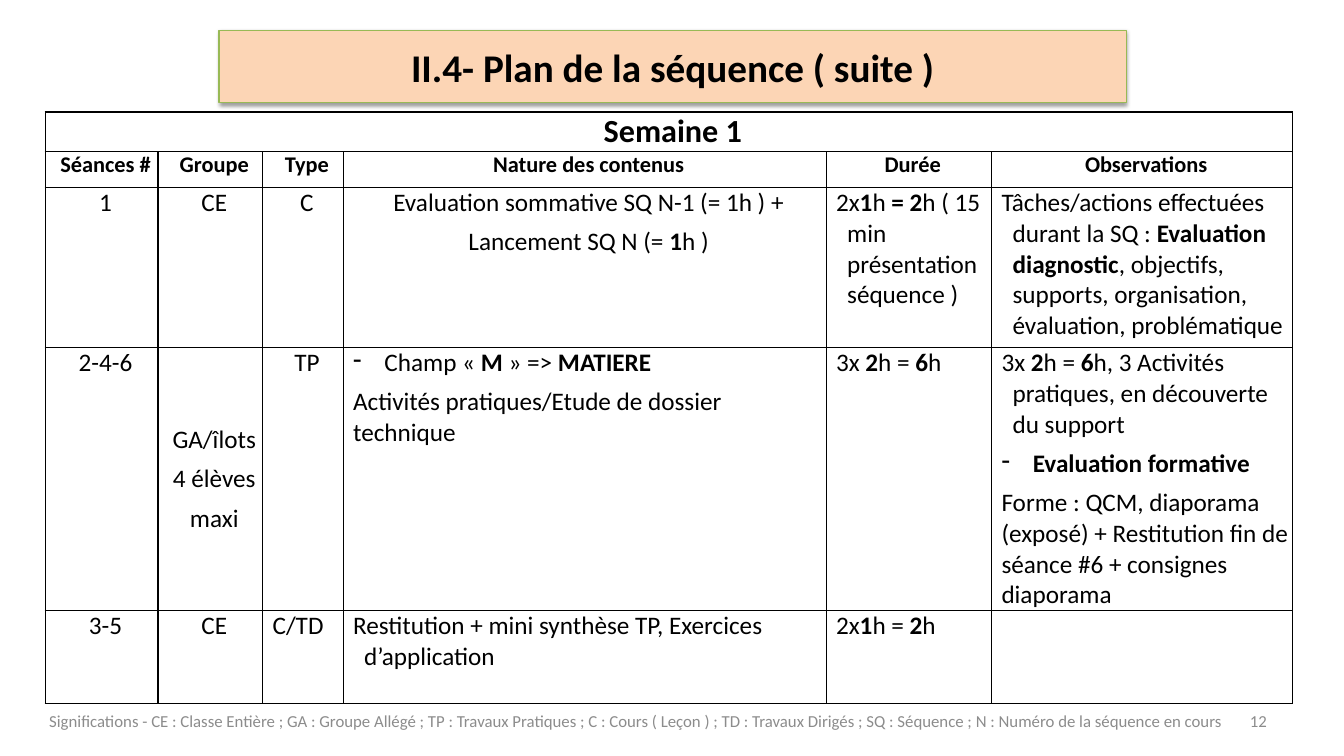
import pptx
import pptx.dml.color
import pptx.enum.shapes
import pptx.enum.text
import pptx.oxml
import pptx.oxml.ns
import pptx.util
from lxml import etree

Cm = pptx.util.Cm
Pt = pptx.util.Pt
ALIGN = pptx.enum.text.PP_ALIGN
MIDDLE = pptx.enum.text.MSO_ANCHOR.MIDDLE
qn = pptx.oxml.ns.qn

# Paragraph kinds: alignment, left margin (cm), first line indent (cm), bullet
KINDS = {
    "centre": (ALIGN.CENTER, 0.48, -0.28, None),
    "hanging": (ALIGN.LEFT, 0.48, -0.28, None),
    "dash": (ALIGN.LEFT, 0.99, -0.79, "-"),
    "block": (ALIGN.LEFT, 0.2, 0, None),
}

COLUMNS = [2.84, 2.64, 2.03, 12.17, 4.17, 7.59]
ROW_HEIGHTS = [1, 0.91, 4.03, 6.63, 2.34]
HEADINGS = ["Séances #", "Groupe", "Type", "Nature des contenus", "Durée", "Observations"]

# One list of (kind, text) per cell; ** switches bold on and off
SESSIONS = [
    [
        [("centre", "1")],
        [("centre", "CE")],
        [("centre", "C")],
        [("centre", "Evaluation sommative SQ N-1 (= 1h ) +"),
         ("centre", "Lancement SQ N (= **1**h )")],
        [("hanging", "2x**1**h** = 2**h ( 15 min présentation séquence )")],
        [("hanging", "Tâches/actions effectuées durant la SQ : **Evaluation diagnostic**, "
                     "objectifs, supports, organisation, évaluation, problématique")],
    ],
    [
        [("centre", "2-4-6")],
        [("centre", "GA/îlots"), ("centre", "4 élèves"), ("centre", "maxi")],
        [("centre", "TP")],
        [("dash", "Champ « **M** » => **MATIERE**"),
         ("block", "Activités pratiques/Etude de dossier technique")],
        [("hanging", "3x **2**h = **6**h")],
        [("hanging", "3x **2**h = **6**h, 3 Activités pratiques, en découverte du support"),
         ("dash", "**Evaluation formative**"),
         ("block", "Forme : QCM, diaporama (exposé) + Restitution fin de séance #6 "
                   "+ consignes diaporama")],
    ],
    [
        [("centre", "3-5")],
        [("centre", "CE")],
        [("hanging", "C/TD")],
        [("hanging", "Restitution + mini synthèse TP, Exercices d’application")],
        [("hanging", "2x**1**h = **2**h")],
        [],
    ],
]


def colour(code):
    return pptx.dml.color.RGBColor.from_string(code)


class Page:
    """The current slide with its font and colours."""
    font = "Calibri"
    ink = "000000"
    grey = "8C8C8C"

    def __init__(self, deck):
        self.shapes = deck.slides.add_slide(deck.slide_layouts[6]).shapes

    def spans(self, para, text, size, code):
        """Add text run by run, with ** switching bold."""
        for index, part in enumerate(text.split("**")):
            if part:
                span = para.add_run()
                span.text = part
                span.font.name = self.font
                span.font.size = Pt(size)
                span.font.bold = index % 2 == 1
                span.font.color.rgb = colour(code)

    def title(self, text, left, top, width, height):
        box = self.shapes.add_shape(pptx.enum.shapes.MSO_SHAPE.RECTANGLE,
                                    Cm(left), Cm(top), Cm(width), Cm(height))
        box.fill.solid()
        box.fill.fore_color.rgb = colour("FCD5B5")
        box.line.color.rgb = colour("98B955")
        box.line.width = Pt(0.75)
        box.shadow.inherit = False
        effects = box.element.spPr.find(qn("a:effectLst"))
        shadow = etree.SubElement(effects, qn("a:outerShdw"), blurRad=str(Pt(3.1)),
                                  dist=str(Pt(1.6)), dir="5400000", rotWithShape="0")
        tint = etree.SubElement(shadow, qn("a:srgbClr"), val=self.ink)
        etree.SubElement(tint, qn("a:alpha"), val="38000")
        box.text_frame.vertical_anchor = MIDDLE
        para = box.text_frame.paragraphs[0]
        para.alignment = ALIGN.CENTER
        self.spans(para, f"**{text}**", 28, self.ink)

    def footer(self, text, left, top, width, height, alignment):
        box = self.shapes.add_textbox(Cm(left), Cm(top), Cm(width), Cm(height))
        box.text_frame.word_wrap = True
        box.text_frame.vertical_anchor = MIDDLE
        para = box.text_frame.paragraphs[0]
        para.alignment = alignment
        self.spans(para, text, 12, self.grey)

    def table(self, left, top, columns, heights):
        frame = self.shapes.add_table(len(heights), len(columns), Cm(left), Cm(top),
                                      Cm(sum(columns)), Cm(sum(heights)))
        grid = frame.table
        grid.first_row = grid.horz_banding = False
        for column, width in zip(grid.columns, columns):
            column.width = Cm(width)
        for row, height in zip(grid.rows, heights):
            row.height = Cm(height)
        for cell in grid.iter_cells():
            cell.fill.background()
            cell.margin_left = cell.margin_right = Cm(0.05)
            cell.margin_top = cell.margin_bottom = 0
            self.borders(cell)
        return grid

    def borders(self, cell):
        properties = cell._tc.get_or_add_tcPr()
        for index, side in enumerate(("lnL", "lnR", "lnT", "lnB")):
            line = etree.Element(qn(f"a:{side}"), w=str(Pt(1)))
            fill = etree.SubElement(line, qn("a:solidFill"))
            etree.SubElement(fill, qn("a:srgbClr"), val=self.ink)
            properties.insert(index, line)

    def write_cell(self, cell, content, size):
        """Fill a cell with its (kind, text) paragraphs."""
        for index, (kind, text) in enumerate(content):
            frame = cell.text_frame
            para = frame.add_paragraph() if index else frame.paragraphs[0]
            alignment, margin, indent, bullet = KINDS[kind]
            para.alignment = alignment
            para.space_before = Pt(6)
            properties = para._p.get_or_add_pPr()
            properties.set("marL", str(Cm(margin)))
            properties.set("indent", str(Cm(indent)))
            if bullet:
                etree.SubElement(properties, qn("a:buChar"), char=bullet)
            self.spans(para, text, size, self.ink)


def main():
    deck = pptx.Presentation()
    deck.slide_width, deck.slide_height = Cm(33.87), Cm(19.05)
    page = Page(deck)
    page.title("II.4- Plan de la séquence ( suite )", 5.52, 0.76, 22.86, 1.83)

    plan = page.table(1.14, 2.82, COLUMNS, ROW_HEIGHTS)
    week = plan.cell(0, 0)
    week.merge(plan.cell(0, len(COLUMNS) - 1))
    page.write_cell(week, [("centre", "**Semaine 1**")], 23)
    for column, heading in enumerate(HEADINGS):
        page.write_cell(plan.cell(1, column), [("centre", f"**{heading}**")], 16)
    for row, session in enumerate(SESSIONS, start=2):
        for column, content in enumerate(session):
            page.write_cell(plan.cell(row, column), content, 18)
    plan.cell(3, 1).vertical_anchor = MIDDLE

    page.footer("12", 24.28, 17.65, 7.9, 1.02, ALIGN.RIGHT)
    page.footer("Significations - CE : Classe Entière ; GA : Groupe Allégé ; "
                "TP : Travaux Pratiques ; C : Cours ( Leçon ) ; TD : Travaux Dirigés ; "
                "SQ : Séquence ; N : Numéro de la séquence en cours",
                0.94, 17.65, 30.2, 1.02, ALIGN.CENTER)
    deck.save("out.pptx")


if __name__ == "__main__":
    main()
